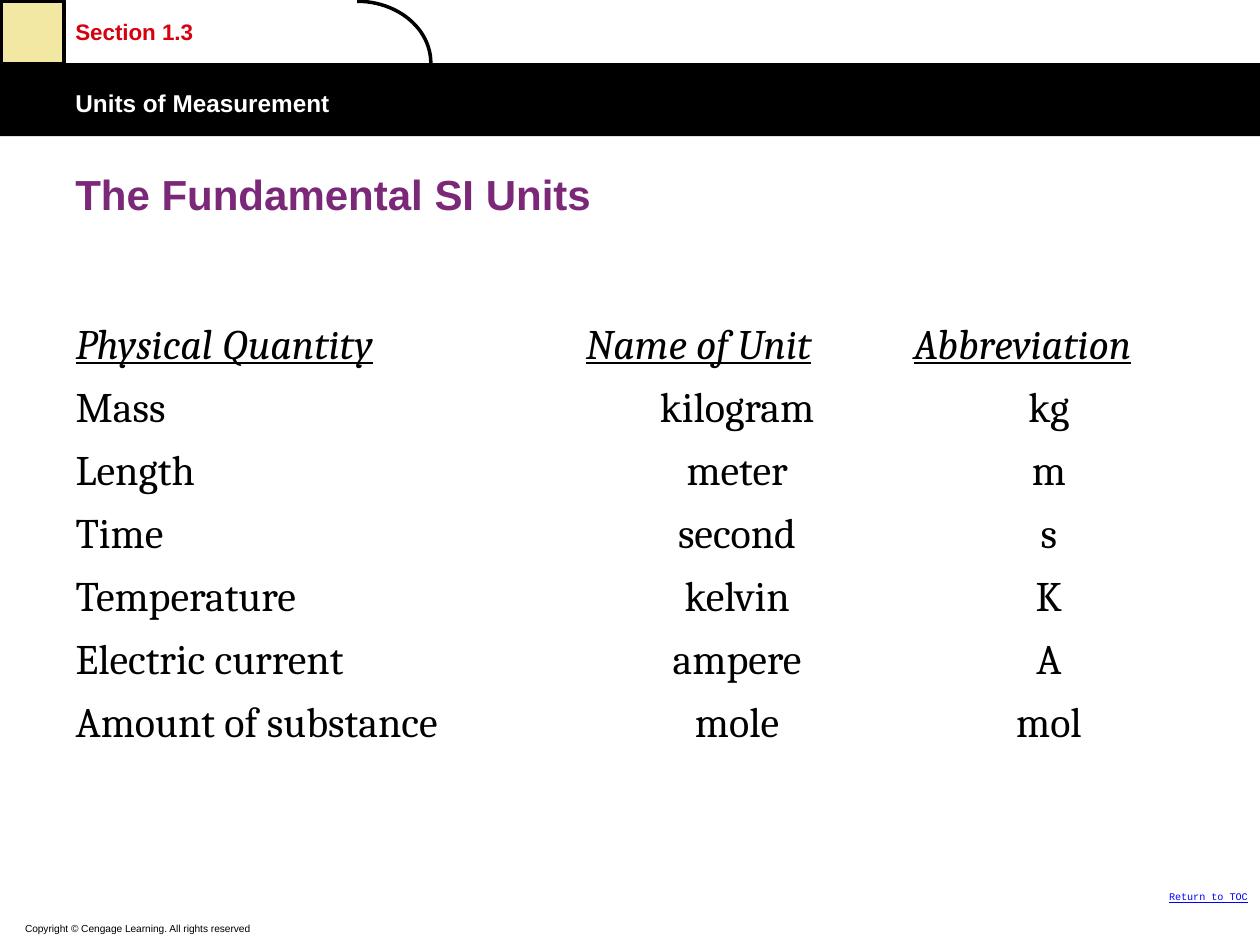
from typing import NamedTuple

from pptx import Presentation
from pptx.dml.color import RGBColor
from pptx.enum.shapes import MSO_SHAPE as Shape
from pptx.enum.text import MSO_ANCHOR as Anchor, PP_ALIGN as Align
from pptx.util import Inches, Pt

BLACK = RGBColor(0x00, 0x00, 0x00)
WHITE = RGBColor(0xFF, 0xFF, 0xFF)
RED = RGBColor(0xD6, 0x00, 0x0E)
CREAM = RGBColor(0xF3, 0xE8, 0xA3)
PURPLE = RGBColor(0x7C, 0x28, 0x78)
LINK_BLUE = RGBColor(0x00, 0x00, 0xFF)


class Box(NamedTuple):
    left: float
    top: float
    width: float
    height: float

    def lengths(self):
        return [Inches(value) for value in self]


class Unit(NamedTuple):
    quantity: str
    name: str
    abbreviation: str


HEADINGS = Unit("Physical Quantity", "Name of Unit", "Abbreviation")
UNITS = [
    Unit("Mass", "kilogram", "kg"),
    Unit("Length", "meter", "m"),
    Unit("Time", "second", "s"),
    Unit("Temperature", "kelvin", "K"),
    Unit("Electric current", "ampere", "A"),
    Unit("Amount of substance", "mole", "mol"),
    Unit("", "", ""),
]
COLUMN_WIDTHS = (4.05, 2.6, 2.35)
ROW_HEIGHT = 0.48


def write(frame, text: str, *, size: float, font="Arial", color=BLACK, bold=False,
          italic=False, underline=False, align=Align.LEFT, raised=0) -> None:
    """Fill the first paragraph; raised is the superscript offset in percent."""
    paragraph = frame.paragraphs[0]
    paragraph.alignment = align
    target = paragraph
    if text:
        target = paragraph.add_run()
        target.text = text
    style = target.font
    style.name, style.size, style.color.rgb = font, Pt(size), color
    style.bold, style.italic, style.underline = bold, italic, underline
    if raised:
        target.font._element.set("baseline", str(raised * 1000))


def add_label(slide, box: Box, text: str, anchor=Anchor.TOP, **style) -> None:
    frame = slide.shapes.add_textbox(*box.lengths()).text_frame
    frame.word_wrap = True
    frame.vertical_anchor = anchor
    write(frame, text, **style)


def add_figure(slide, kind, box: Box, fill=None, line=None) -> None:
    figure = slide.shapes.add_shape(kind, *box.lengths())
    figure.shadow.inherit = False
    if fill is None:
        figure.fill.background()
    else:
        figure.fill.solid()
        figure.fill.fore_color.rgb = fill
    if line is None:
        figure.line.fill.background()
    else:
        figure.line.color.rgb = line
        figure.line.width = Pt(2)


def add_unit_table(slide, left: float, top: float) -> None:
    rows = [HEADINGS, *UNITS]
    box = Box(left, top, sum(COLUMN_WIDTHS), ROW_HEIGHT * len(rows))
    table = slide.shapes.add_table(len(rows), len(HEADINGS), *box.lengths()).table
    table.first_row = table.horz_banding = False
    table_style = table._tbl.tblPr.find("{*}tableStyleId")
    table_style.text = "{2D5ABB26-0587-4C30-8999-92F81FD0307C}"  # no style, no grid
    for column, width in zip(table.columns, COLUMN_WIDTHS):
        column.width = Inches(width)
    for r, row in enumerate(rows):
        heading = r == 0
        for c, text in enumerate(row):
            cell = table.cell(r, c)
            cell.fill.background()
            write(cell.text_frame, text, size=24, font="Cambria",
                  italic=heading, underline=heading,
                  align=Align.LEFT if heading or c == 0 else Align.CENTER)


def main() -> None:
    deck = Presentation()
    deck.slide_width, deck.slide_height = Inches(10), Inches(7.5)
    slide = deck.slides.add_slide(deck.slide_layouts[6])

    add_figure(slide, Shape.RECTANGLE, Box(0, 0.5, 10, 0.58), fill=BLACK)
    add_label(slide, Box(0.5, 0.03, 2.85, 0.47), "Section 1.3",
              size=22, color=RED, bold=True, raised=20)
    add_label(slide, Box(0.5, 0.58, 9.5, 0.5), "Units of Measurement",
              size=24, color=WHITE, bold=True, raised=20)
    add_figure(slide, Shape.RECTANGLE, Box(0.01, 0.01, 0.5, 0.5), fill=CREAM, line=BLACK)
    add_figure(slide, Shape.ARC, Box(2.25, 0.01, 1.17, 0.98), line=BLACK)
    add_label(slide, Box(8.92, 7, 1.08, 0.22), "Return to TOC", size=10,
              font="Courier New", color=LINK_BLUE, underline=True,
              align=Align.RIGHT, raised=30)
    add_label(slide, Box(0.1, 7.24, 6.42, 0.25),
              "Copyright © Cengage Learning. All rights reserved", size=10, raised=20)
    add_label(slide, Box(0.5, 1.25, 9, 0.58), "The Fundamental SI Units",
              anchor=Anchor.MIDDLE, size=24, color=PURPLE, bold=True)
    add_unit_table(slide, 0.5, 2.5)

    deck.save("out.pptx")


if __name__ == "__main__":
    main()
